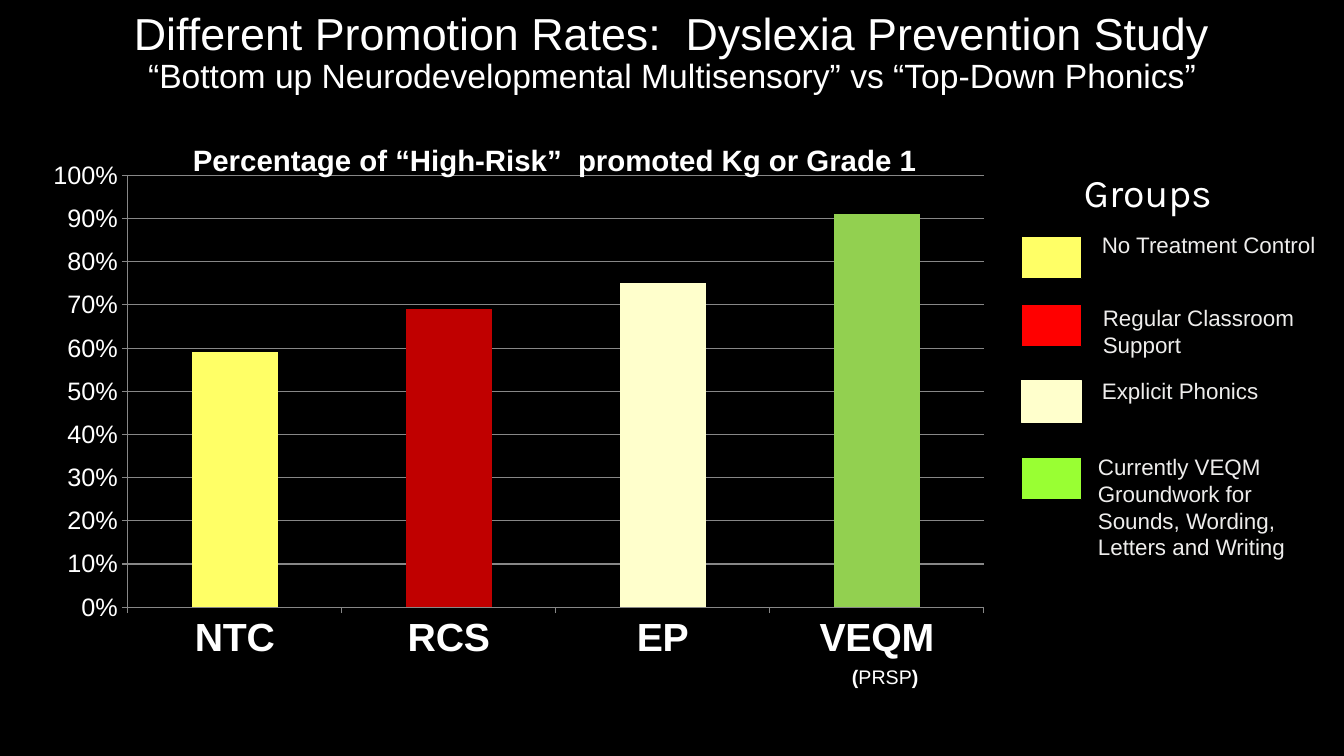
"""Builds the slide on promotion rates in a dyslexia prevention study."""
from lxml import etree
from pptx import Presentation
from pptx.chart.data import CategoryChartData
from pptx.dml.color import RGBColor
from pptx.enum.chart import XL_CHART_TYPE, XL_TICK_MARK
from pptx.enum.shapes import MSO_SHAPE
from pptx.enum.text import MSO_ANCHOR, PP_ALIGN
from pptx.oxml import parse_xml
from pptx.oxml.ns import nsdecls
from pptx.util import Emu, Pt

COLUMNS = XL_CHART_TYPE.COLUMN_CLUSTERED
OUTSIDE = XL_TICK_MARK.OUTSIDE
RECT = MSO_SHAPE.RECTANGLE
TOP, BOTTOM = MSO_ANCHOR.TOP, MSO_ANCHOR.BOTTOM
LEFT, CENTER = PP_ALIGN.LEFT, PP_ALIGN.CENTER

BLACK = RGBColor(0x00, 0x00, 0x00)
WHITE = RGBColor(0xFF, 0xFF, 0xFF)
OFF_WHITE = RGBColor(0xEE, 0xED, 0xEC)
GRAY = RGBColor(0x87, 0x87, 0x87)
YELLOW = RGBColor(0xFF, 0xFF, 0x66)
DARK_RED = RGBColor(0xC0, 0x00, 0x00)
RED = RGBColor(0xFF, 0x00, 0x00)
CREAM = RGBColor(0xFF, 0xFF, 0xCC)
GREEN = RGBColor(0x92, 0xD0, 0x50)
LIME = RGBColor(0x99, 0xFF, 0x33)

EMU_PER_PX = 12192000 / 1344


def px(*lengths):
    return [Emu(round(n * EMU_PER_PX)) for n in lengths]


def add_text(box, runs, color, font="Arial", anchor=TOP, align=LEFT):
    tf = slide.shapes.add_textbox(*px(*box)).text_frame
    tf.word_wrap = True
    tf.vertical_anchor = anchor
    p = tf.paragraphs[0]
    p.alignment = align
    for text, size, bold in runs:
        if text.startswith("“"):
            p.add_line_break()
        r = p.add_run()
        r.text = text
        r.font.name = font
        r.font.size = Pt(size)
        r.font.bold = bold
        r.font.color.rgb = color
    return p


prs = Presentation()
prs.slide_width, prs.slide_height = px(1344, 756)
slide = prs.slides.add_slide(prs.slide_layouts[6])
slide.background.fill.solid()
slide.background.fill.fore_color.rgb = BLACK

heading = [
    ("Different Promotion Rates:  Dyslexia Prevention Study", 32, False),
    ("“Bottom up Neurodevelopmental Multisensory” vs “Top-Down Phonics”", 24, False),
]
p = add_text((0, 0, 1344, 101), heading, WHITE, anchor=BOTTOM, align=CENTER)
p.line_spacing = 0.9

data = CategoryChartData(number_format="0%")
data.categories = ["NTC", "RCS", "EP", "VEQM"]
data.add_series("Series 1", (0.59, 0.69, 0.75, 0.91))
chart = slide.shapes.add_chart(COLUMNS, *px(43, 120, 963, 555), data).chart
chart.has_legend = False
chart.font.name = "Arial"
chart.font.size = Pt(18)
chart.font.color.rgb = WHITE

chart.has_title = True
r = chart.chart_title.text_frame.paragraphs[0].add_run()
r.text = "Percentage of “High-Risk”  promoted Kg or Grade 1"
r.font.name = "Arial"
r.font.size = Pt(21)
r.font.bold = True
r.font.color.rgb = WHITE

title = chart.chart_title._element
plot_area = chart.plots[0]._element.getparent()
layouts = [
    (title, {"xMode": "edge", "yMode": "edge", "x": 0.15, "y": 0.03}),
    (plot_area, {"layoutTarget": "inner", "xMode": "edge", "yMode": "edge",
                 "x": 0.088, "y": 0.1, "w": 0.889, "h": 0.778}),
]
for parent, settings in layouts:
    for old in parent.findall("{*}layout"):
        parent.remove(old)
    layout = parse_xml(f"<c:layout {nsdecls('c')}><c:manualLayout/></c:layout>")
    for name, value in settings.items():
        tag = etree.QName(layout).namespace
        etree.SubElement(layout[0], f"{{{tag}}}{name}").set("val", str(value))
    parent.insert(1 if parent is title else 0, layout)

plot = chart.plots[0]
plot.gap_width = 150
plot.vary_by_categories = False
for i, color in enumerate((YELLOW, DARK_RED, CREAM, GREEN)):
    fill = plot.series[0].points[i].format.fill
    fill.solid()
    fill.fore_color.rgb = color

for axis, size, bold in ((chart.category_axis, 28, True), (chart.value_axis, 18, False)):
    axis.major_tick_mark = OUTSIDE
    axis.format.line.color.rgb = GRAY
    font = axis.tick_labels.font
    font.name = "Arial"
    font.size = Pt(size)
    font.bold = bold
    font.color.rgb = WHITE
values = chart.value_axis
values.minimum_scale, values.maximum_scale, values.major_unit = 0, 1, 0.1
values.tick_labels.number_format = "0%"
values.tick_labels.number_format_is_linked = False
values.has_major_gridlines = True
values.major_gridlines.format.line.color.rgb = GRAY

former_name = [("(", 14, True), ("PRSP", 14, False), (")", 14, True)]
add_text((842, 657, 98, 36), former_name, WHITE, anchor=BOTTOM)

add_text((1074, 163, 211, 57), [("Groups", 28, False)], WHITE, font="Karla")
groups = [
    ("No Treatment Control", (1092, 226, 239, 37), 237, YELLOW, BLACK),
    ("Regular Classroom Support", (1093, 299, 239, 65), 305, RED, BLACK),
    ("Explicit Phonics", (1092, 372, 231, 37), 381, CREAM, CREAM),
    ("Currently VEQM Groundwork for Sounds, Wording, Letters and Writing",
     (1088, 448, 246, 119), 458, LIME, BLACK),
]
for label, box, top, color, outline in groups:
    add_text(box, [(label, 16, False)], OFF_WHITE)
    s = slide.shapes.add_shape(RECT, *px(1022, top, 60, 42))
    s.shadow.inherit = False
    s.fill.solid()
    s.fill.fore_color.rgb = color
    s.line.color.rgb = outline
    s.line.width = Pt(0.75)

prs.save("out.pptx")
